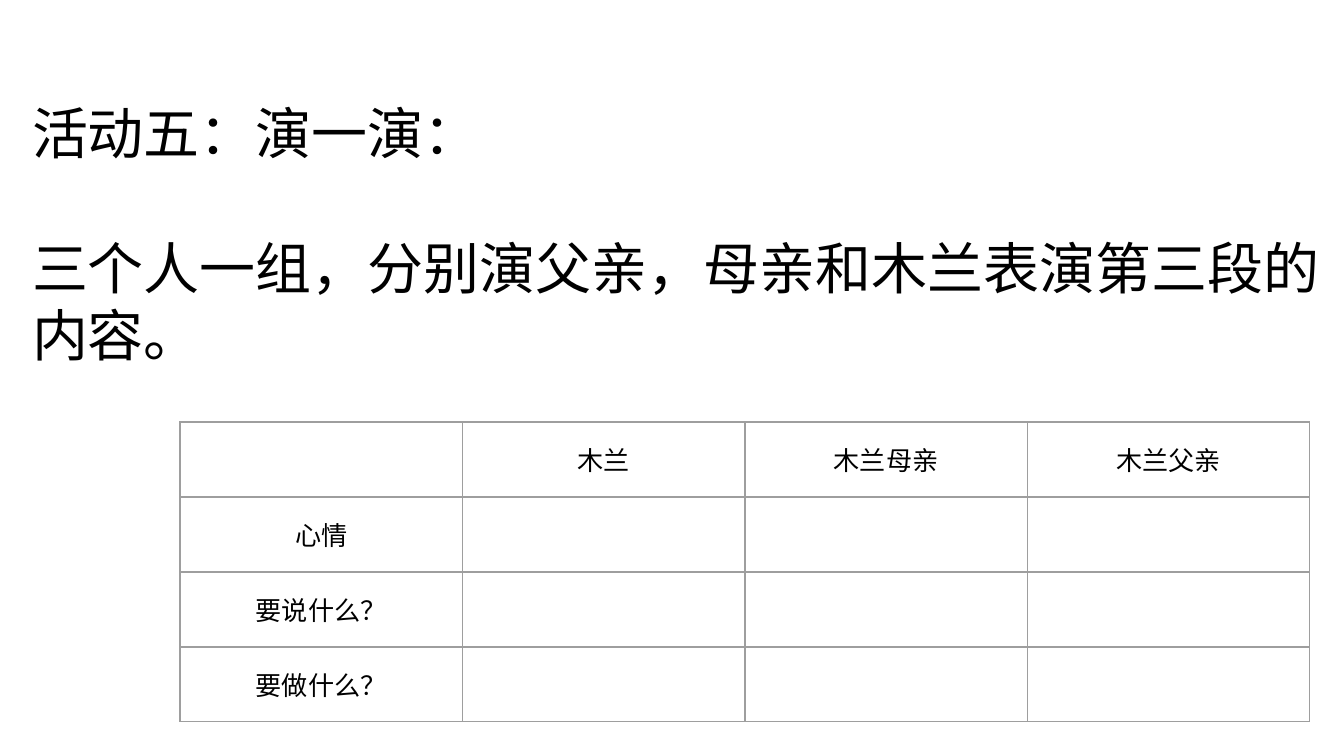
from lxml import etree
from pptx import Presentation
from pptx import util as u
from pptx.dml.color import RGBColor
from pptx.enum import text
from pptx.oxml import ns

SCALE = 914400 / 134.4  # EMU in one px
HUES = {"ink": "000000", "paper": "FFFFFF", "rule": "9E9E9E"}


def px(n):
    return u.Emu(round(n * SCALE))


class Deck:
    """Holds the style and the current slide."""

    head_font = "Noto Sans CJK SC"
    cell_font = "Arial"
    pad = 13

    def __init__(self, wide, high):
        self.prs = Presentation()
        self.prs.slide_width, self.prs.slide_height = px(wide), px(high)
        self.slide = self.prs.slides.add_slide(self.prs.slide_layouts[5])
        fill = self.slide.background.fill
        fill.solid()
        fill.fore_color.rgb = RGBColor.from_string(HUES["paper"])

    def style(self, para, font, size, align):
        para.alignment = align
        for run in para.runs:
            run.font.name = font
            run.font.size = u.Pt(size)
            run.font.bold = False
            run.font.color.rgb = RGBColor.from_string(HUES["ink"])

    def title(self, x, y, w, h, lines, size, pitch):
        box = self.slide.shapes.title
        box.left, box.top, box.width, box.height = map(px, (x, y, w, h))
        frame = box.text_frame
        frame.text = "\n".join(lines)
        frame.word_wrap = True
        frame.auto_size = text.MSO_AUTO_SIZE.NONE
        frame.vertical_anchor = text.MSO_ANCHOR.TOP
        frame.margin_left = frame.margin_right = px(self.pad)
        frame.margin_top, frame.margin_bottom = px(20), px(self.pad)
        for i, para in enumerate(frame.paragraphs):
            self.style(para, self.head_font, size, text.PP_ALIGN.LEFT)
            para.line_spacing = u.Pt(pitch)
            para.space_before = u.Pt(pitch if i else 0)
            for run in para.runs:
                east = etree.SubElement(run.font._element, ns.qn("a:ea"))
                east.set("typeface", self.head_font)

    def border(self, cell):
        props = cell._tc.get_or_add_tcPr()
        for i, side in enumerate(("lnL", "lnR", "lnT", "lnB")):
            line = etree.Element(ns.qn("a:" + side), w=str(u.Pt(0.75)))
            solid = etree.SubElement(line, ns.qn("a:solidFill"))
            etree.SubElement(solid, ns.qn("a:srgbClr"), val=HUES["rule"])
            props.insert(i, line)

    def table(self, x, y, w, h, rows, size):
        shape = self.slide.shapes.add_table(
            len(rows), len(rows[0]), *map(px, (x, y, w, h)))
        grid = shape.table
        grid.first_row = grid.horz_banding = False
        for r, row in enumerate(rows):
            for c, label in enumerate(row):
                cell = grid.cell(r, c)
                cell.text = label
                cell.fill.background()
                cell.vertical_anchor = text.MSO_ANCHOR.MIDDLE
                cell.margin_left = cell.margin_right = px(self.pad)
                cell.margin_top = cell.margin_bottom = px(self.pad)
                self.style(cell.text_frame.paragraphs[0], self.cell_font,
                           size, text.PP_ALIGN.CENTER)
                self.border(cell)


def main():
    deck = Deck(1344, 756)

    # Task
    deck.title(19, 79, 1325, 269, [
        "活动五：演一演：",
        "三个人一组，分别演父亲，母亲和木兰表演第三段的内容。",
    ], size=30, pitch=36)

    # Planning grid: roles across, questions down
    roles = ["木兰", "木兰母亲", "木兰父亲"]
    asks = ["心情", "要说什么？", "要做什么？"]
    rows = [[""] + roles] + [[ask] + [""] * len(roles) for ask in asks]
    deck.table(180, 422, 1130, 300, rows, size=14)

    deck.prs.save("out.pptx")


if __name__ == "__main__":
    main()
